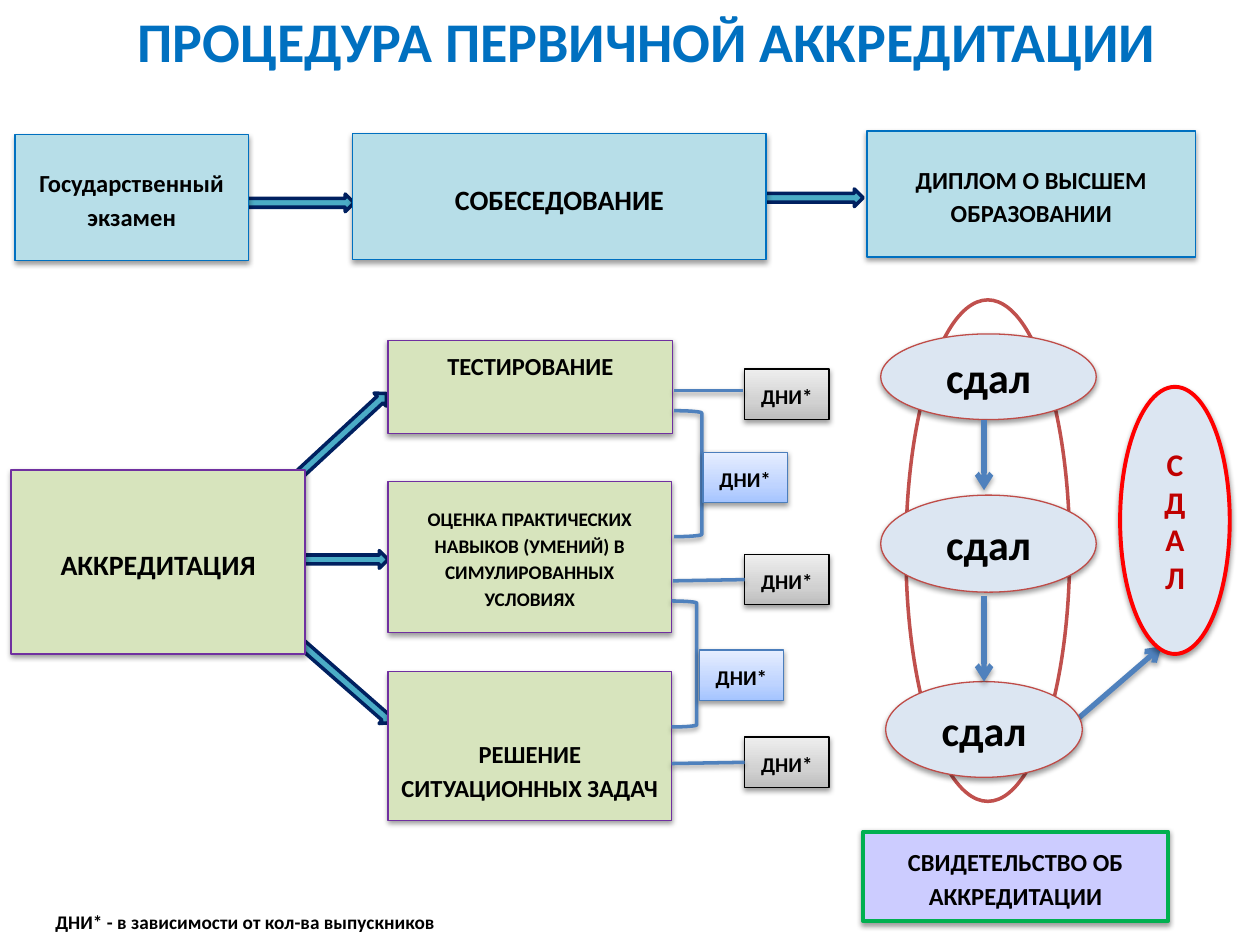
from copy import deepcopy

from lxml import etree
from pptx import Presentation
from pptx.dml.color import RGBColor
from pptx.enum.shapes import MSO_CONNECTOR, MSO_SHAPE
from pptx.enum.text import MSO_ANCHOR, PP_ALIGN
from pptx.oxml.ns import qn
from pptx.util import Inches, Pt

RECT, OVAL = MSO_SHAPE.RECTANGLE, MSO_SHAPE.OVAL
ARROW, BRACE = MSO_SHAPE.RIGHT_ARROW, MSO_SHAPE.RIGHT_BRACKET
LINE = MSO_CONNECTOR.STRAIGHT
TOP, MID, LOW = MSO_ANCHOR.TOP, MSO_ANCHOR.MIDDLE, MSO_ANCHOR.BOTTOM
LEFT, CENTER = PP_ALIGN.LEFT, PP_ALIGN.CENTER

BLACK = RGBColor(0x00, 0x00, 0x00)
WHITE = RGBColor(0xFF, 0xFF, 0xFF)
BLUE = RGBColor(0x00, 0x70, 0xC0)
STEEL = RGBColor(0x4F, 0x81, 0xBD)
EDGE = RGBColor(0x4B, 0x7E, 0xBC)
TEAL = RGBColor(0x4B, 0xAC, 0xC6)
NAVY = RGBColor(0x00, 0x20, 0x60)
AQUA = RGBColor(0xB7, 0xDE, 0xE8)
OLIVE = RGBColor(0xD7, 0xE4, 0xBD)
PLUM = RGBColor(0x70, 0x30, 0xA0)
PALE = RGBColor(0xDC, 0xE6, 0xF2)
BRICK = RGBColor(0xC0, 0x50, 0x4D)
RUST = RGBColor(0xBF, 0x4C, 0x48)
RED = RGBColor(0xFF, 0x00, 0x00)
DARK = RGBColor(0xC0, 0x00, 0x00)
LILAC = RGBColor(0xCC, 0xCC, 0xFF)
GREEN = RGBColor(0x00, 0xB0, 0x50)
SKY = [RGBColor(0xA4, 0xC4, 0xFF), RGBColor(0xBF, 0xD4, 0xFF), RGBColor(0xE6, 0xEE, 0xFF)]
GREY = [RGBColor(0xBD, 0xBD, 0xBD), RGBColor(0xD1, 0xD1, 0xD1), RGBColor(0xEE, 0xEE, 0xEE)]


def assign(item, values):
    """Set each attribute in values on item."""
    for name, value in values.items():
        setattr(item, name, value)


def write(shape, text, size, color=BLACK, anchor=MID, align=CENTER, space=1.15, after=0):
    """Fill a shape with bold paragraphs, one for each line of text."""
    frame = shape.text_frame
    assign(frame, {"text": text, "word_wrap": True, "vertical_anchor": anchor})
    for para in frame.paragraphs:
        assign(para, {"alignment": align, "line_spacing": space, "space_after": Pt(after)})
        for run in para.runs:
            assign(run.font, {"name": "Calibri", "size": Pt(size), "bold": True})
            run.font.color.rgb = color
    return frame


def shade(shape, shown=True, alpha=38, dist=1.6):
    """Give a finished shape a soft drop shadow or none."""
    part = etree.SubElement(shape._element.spPr, qn("a:effectLst"))
    if shown:
        drop = etree.SubElement(part, qn("a:outerShdw"), blurRad=str(Pt(3.1)),
                                dist=str(Pt(dist)), dir="5400000", rotWithShape="0")
        tint = etree.SubElement(drop, qn("a:srgbClr"), val="000000")
        etree.SubElement(tint, qn("a:alpha"), val=str(alpha * 1000))


def blend(shape, colors):
    """Fill a shape with a vertical three-stop gradient."""
    shape.fill.gradient()
    shape.fill.gradient_angle = 90
    stops = shape._element.spPr.find(qn("a:gradFill")).find(qn("a:gsLst"))
    stops.append(deepcopy(stops[-1]))
    for stop, place, color in zip(shape.fill.gradient_stops, (0, 0.35, 1), colors):
        stop.position = place
        stop.color.rgb = color


def draw(slide, kind, at, fill, edge, width=0.75, shadow=True):
    """Add a preset shape with its fill, outline and shadow."""
    shape = slide.shapes.add_shape(kind, *map(Inches, at))
    if fill is None:
        shape.fill.background()
    elif isinstance(fill, list):
        blend(shape, fill)
    else:
        shape.fill.solid()
        shape.fill.fore_color.rgb = fill
    shape.line.color.rgb = edge
    shape.line.width = Pt(width)
    shade(shape, shadow)
    return shape


def point(slide, at, turn=0):
    """Add a block arrow turned by some degrees."""
    arrow = draw(slide, ARROW, (*at, 0.99, 0.14), TEAL, NAVY, 2, False)
    arrow.rotation = turn


def link(slide, start, end, goal=None, side=1, head=False):
    """Add a straight line, joined to the goal shape if there is one."""
    line = slide.shapes.add_connector(LINE, *map(Inches, (*start, *end)))
    if goal is not None:
        line.end_connect(goal, side)
    line.line.color.rgb = STEEL
    line.line.width = Pt(3 if head else 2)
    if head:
        etree.SubElement(line.line._get_or_add_ln(), qn("a:tailEnd"), type="arrow")
        shade(line, alpha=35, dist=1.8)
    else:
        shade(line)


def days(slide, left, top, fill, edge):
    """Add a small box for the days."""
    box = draw(slide, RECT, (left, top, 0.67, 0.4), fill, edge)
    write(box, "ДНИ*", 12, after=10)
    return box


def passed(slide, at):
    """Add an oval for a passed stage."""
    oval = draw(slide, OVAL, at, PALE, RUST)
    write(oval, "сдал", 24, space=1)
    return oval


def stages(slide):
    """Add the top row and the accreditation stages."""
    for at, turn in (((1.82, 1.54), 0), ((5.86, 1.5), 0), ((2.21, 3.39), 317.2),
                     ((2.09, 4.37), 0), ((2.24, 5.34), 41.2)):
        point(slide, at, turn)
    for at, text, size in (
        ((0.12, 1.07, 1.85, 1), "Государственный экзамен", 14),
        ((2.8, 1.06, 3.28, 1), "СОБЕСЕДОВАНИЕ", 16),
        ((6.88, 1.04, 2.61, 1), "ДИПЛОМ О ВЫСШЕМ ОБРАЗОВАНИИ", 14),
    ):
        write(draw(slide, RECT, at, AQUA, BLUE), text, size, after=10)
    for at, text, size, anchor, width in (
        ((0.09, 3.73, 2.33, 1.46), "АККРЕДИТАЦИЯ", 16, MID, 1),
        ((3.08, 2.7, 2.26, 0.74), "ТЕСТИРОВАНИЕ", 14, TOP, 0.75),
        ((3.08, 3.82, 2.25, 1.2),
         "ОЦЕНКА ПРАКТИЧЕСКИХ НАВЫКОВ (УМЕНИЙ) В СИМУЛИРОВАННЫХ\nУСЛОВИЯХ", 11, MID, 0.75),
        ((3.08, 5.33, 2.25, 1.18), "РЕШЕНИЕ\nСИТУАЦИОННЫХ ЗАДАЧ", 14, LOW, 0.75),
    ):
        frame = write(draw(slide, RECT, at, OLIVE, PLUM, width), text, size, anchor=anchor)
        if anchor == LOW:
            assign(frame, {"margin_left": Inches(0.05), "margin_right": Inches(0.05),
                           "margin_bottom": Inches(0.14)})


def spans(slide):
    """Add the brackets, the day boxes and their lines."""
    for at in ((5.35, 3.26, 0.22, 1), (5.33, 4.77, 0.2, 1)):
        draw(slide, BRACE, at, None, STEEL, 2)
    for left, top in ((5.58, 3.59), (5.55, 5.16)):
        days(slide, left, top, SKY, EDGE)
    days(slide, 5.91, 2.93, GREY, BLACK)
    link(slide, (5.35, 3.1), (5.9, 3.1))
    for top, start in ((4.4, (5.34, 4.61)), (5.85, (5.33, 6.06))):
        box = days(slide, 5.91, top, GREY, BLACK)
        link(slide, start, (5.91, top + 0.2), box)


def results(slide):
    """Add the chain of passed stages and the certificate."""
    draw(slide, OVAL, (7.19, 2.38, 1.3, 3.98), WHITE, BRICK, 2, False)
    passed(slide, (6.99, 2.65, 1.71, 0.68))
    link(slide, (7.81, 3.33), (7.81, 3.89), head=True)
    link(slide, (8.49, 5.76), (9.22, 5.13), head=True)
    total = draw(slide, OVAL, (8.89, 3.07, 0.87, 2.12), PALE, RED, 2.25)
    write(total, "С\nД\nА\nЛ", 18, DARK, space=1)
    passed(slide, (6.99, 3.93, 1.71, 0.77))
    last = passed(slide, (7.03, 5.41, 1.56, 0.76))
    link(slide, (7.81, 4.73), (7.81, 5.41), last, 0, True)
    paper = draw(slide, RECT, (6.85, 6.6, 2.42, 0.71), LILAC, GREEN, 2.25)
    write(paper, "СВИДЕТЕЛЬСТВО ОБ АККРЕДИТАЦИИ", 14, after=10)


def main():
    """Build the slide and save it."""
    deck = Presentation()
    assign(deck, {"slide_width": Inches(10), "slide_height": Inches(7.5)})
    slide = deck.slides.add_slide(deck.slide_layouts[5])
    title = slide.shapes.title
    assign(title, {"left": Inches(-0.06), "top": Inches(0),
                   "width": Inches(10.39), "height": Inches(0.64)})
    write(title, "ПРОЦЕДУРА ПЕРВИЧНОЙ АККРЕДИТАЦИИ", 32, BLUE, space=1)
    stages(slide)
    spans(slide)
    results(slide)
    note = slide.shapes.add_textbox(*map(Inches, (0.34, 7.11, 6.05, 0.39)))
    write(note, "ДНИ* - в зависимости от кол-ва выпускников", 11, align=LEFT)
    deck.save("out.pptx")


if __name__ == "__main__":
    main()
